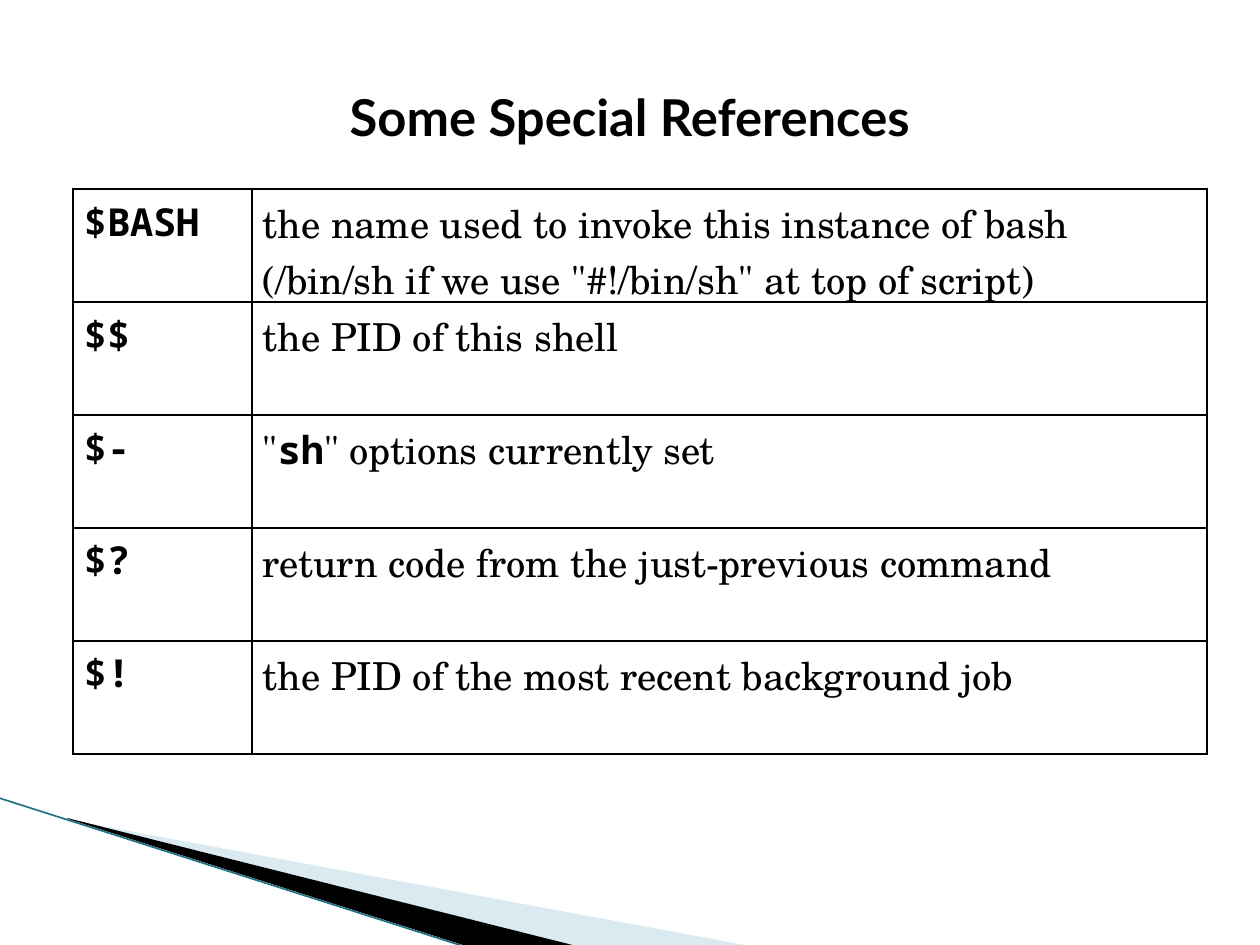
"""Build the slide listing special shell references."""
from dataclasses import dataclass

from lxml import etree
from pptx import Presentation
from pptx import util as u
from pptx.dml.color import RGBColor
from pptx.enum import shapes, text
from pptx.oxml import ns

SCALE = u.Inches(1) / 126
BLACK = RGBColor(0x00, 0x00, 0x00)
PALE_BLUE = RGBColor(0xA0, 0xCB, 0xDC)
TEAL = RGBColor(0x1F, 0x72, 0x88)
TITLE = {"name": "Lato", "size": u.Pt(29), "bold": True}
CODE = {"name": "Noto Sans Mono", "size": u.Pt(22), "bold": True}
PROSE = {"name": "TeX Gyre Schola", "size": u.Pt(22), "bold": False}
MARGINS = {"margin_left": 11, "margin_right": 11, "margin_top": 6, "margin_bottom": 6}
ROW_HEIGHT = 113
COLUMN_WIDTHS = (179, 955)


@dataclass
class Wedge:
    points: list[tuple[int, int]]
    color: RGBColor
    opacity: int


@dataclass
class Piece:
    words: str
    style: dict


@dataclass
class Reference:
    name: str
    meaning: list[list[Piece]]


WEDGES = [
    Wedge([(69, 820), (750, 946), (575, 946), (69, 819)], PALE_BLUE, 40),
    Wedge([(67, 818), (576, 946), (469, 947), (68, 819)], BLACK, 100),
]
REFERENCES = [
    Reference("$BASH", [
        [Piece("the name used to invoke this instance of bash", PROSE)],
        [Piece('(/bin/sh if we use "#!/bin/sh" at top of script)', PROSE)],
    ]),
    Reference("$$", [[Piece("the PID of this shell", PROSE)]]),
    Reference("$-", [[Piece('"', PROSE), Piece("sh", CODE),
                      Piece('" options currently set', PROSE)]]),
    Reference("$?", [[Piece("return code from the just-previous command", PROSE)]]),
    Reference("$!", [[Piece("the PID of the most recent background job", PROSE)]]),
]


def px(length: int) -> int:
    """Turn px into EMU."""
    return round(length * SCALE)


def set_all(target, values: dict) -> None:
    """Set every attribute named in a dict."""
    for name, value in values.items():
        setattr(target, name, value)


def set_margins(target) -> None:
    """Give a cell or text frame the common insets."""
    set_all(target, {side: px(size) for side, size in MARGINS.items()})


def add_span(para, piece: Piece) -> None:
    """Add one styled run to a paragraph."""
    span = para.add_run()
    span.text = piece.words
    set_all(span.font, piece.style)
    span.font.color.rgb = BLACK


def draw_wedge(page, wedge: Wedge) -> None:
    """Draw one filled wedge of the corner decoration."""
    builder = page.shapes.build_freeform(*wedge.points[0], scale=SCALE)
    builder.add_line_segments(wedge.points[1:], close=True)
    shape = builder.convert_to_shape()
    shape.shadow.inherit = False
    shape.fill.solid()
    shape.fill.fore_color.rgb = wedge.color
    shape.line.fill.background()
    if wedge.opacity < 100:
        color = shape.fill._xPr.find(f".//{ns.qn('a:srgbClr')}")
        etree.SubElement(color, ns.qn("a:alpha"), val=str(wedge.opacity * 1000))


def draw_edge(page) -> None:
    """Draw the thin line along the corner decoration."""
    edge = page.shapes.add_connector(
        shapes.MSO_CONNECTOR.STRAIGHT, px(-1), px(798), px(469), px(948))
    edge.line.color.rgb = TEAL
    edge.line.width = u.Pt(0.95)
    etree.SubElement(edge._element.spPr, ns.qn("a:effectLst"))


def draw_title(page, words: str) -> None:
    """Draw the centred slide title."""
    box = page.shapes.add_textbox(px(63), px(38), px(1134), px(157))
    frame = box.text_frame
    set_all(frame, {"word_wrap": True, "vertical_anchor": text.MSO_ANCHOR.MIDDLE})
    set_margins(frame)
    para = frame.paragraphs[0]
    para.alignment = text.PP_ALIGN.CENTER
    add_span(para, Piece(words, TITLE))


def add_borders(cell) -> None:
    """Put a thin black line on each side of a cell."""
    properties = cell._tc.get_or_add_tcPr()
    for index, side in enumerate(("lnL", "lnR", "lnT", "lnB")):
        line = etree.Element(ns.qn(f"a:{side}"), w=str(u.Pt(1)))
        fill = etree.SubElement(line, ns.qn("a:solidFill"))
        etree.SubElement(fill, ns.qn("a:srgbClr"), val=str(BLACK))
        properties.insert(index, line)


def fill_cell(cell, lines: list[list[Piece]]) -> None:
    """Write lines of styled pieces into a bordered cell."""
    set_margins(cell)
    cell.fill.background()
    add_borders(cell)
    frame = cell.text_frame
    for index, pieces in enumerate(lines):
        para = frame.add_paragraph() if index else frame.paragraphs[0]
        para.line_spacing = 0.98
        for piece in pieces:
            add_span(para, piece)


def draw_table(page, references: list[Reference]) -> None:
    """Draw the table of references and their meanings."""
    table = page.shapes.add_table(
        len(references), len(COLUMN_WIDTHS), px(73), px(189),
        px(sum(COLUMN_WIDTHS)), px(ROW_HEIGHT * len(references))).table
    set_all(table, {"first_row": False, "horz_banding": False})
    for column, width in zip(table.columns, COLUMN_WIDTHS):
        column.width = px(width)
    for index, reference in enumerate(references):
        table.rows[index].height = px(ROW_HEIGHT)
        fill_cell(table.cell(index, 0), [[Piece(reference.name, CODE)]])
        fill_cell(table.cell(index, 1), reference.meaning)


def main() -> None:
    """Assemble and save the deck."""
    deck = Presentation()
    set_all(deck, {"slide_width": px(1260), "slide_height": px(945)})
    page = deck.slides.add_slide(deck.slide_layouts[6])
    for wedge in WEDGES:
        draw_wedge(page, wedge)
    draw_edge(page)
    draw_title(page, "Some Special References")
    draw_table(page, REFERENCES)
    deck.save("out.pptx")


if __name__ == "__main__":
    main()
